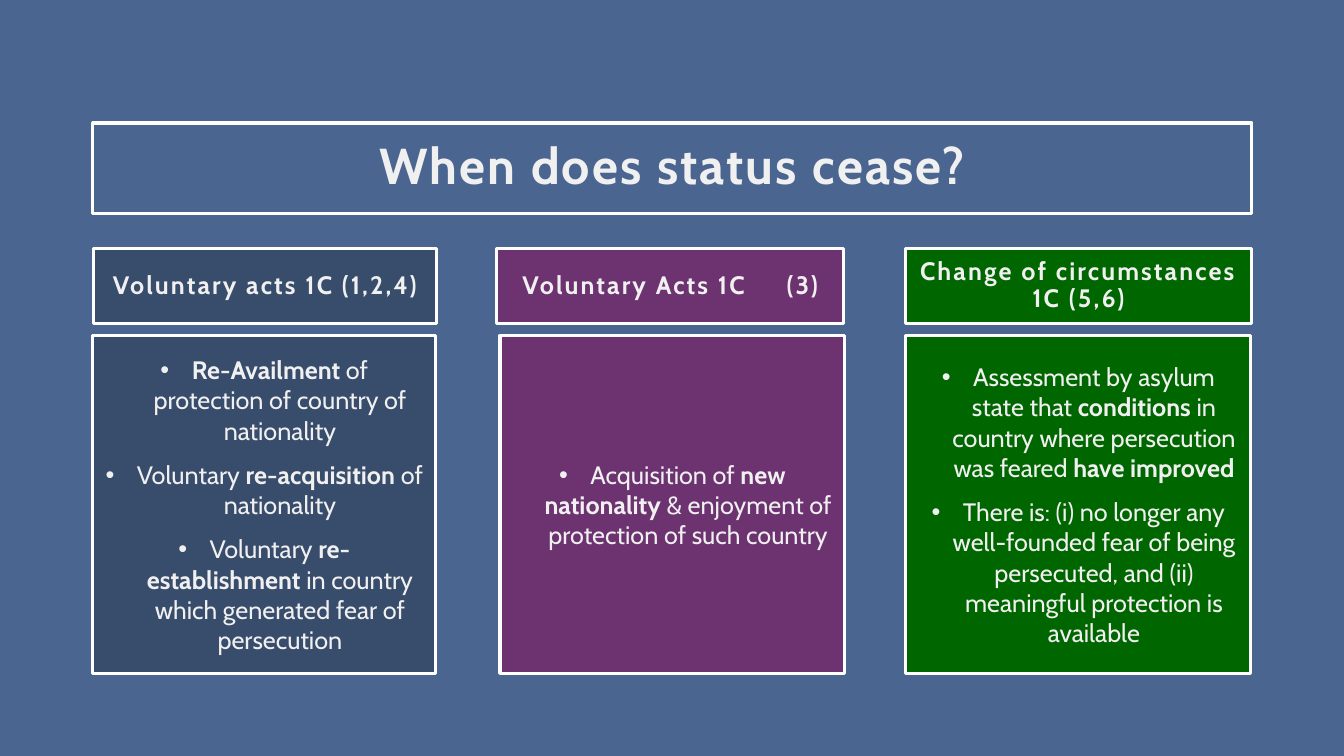
from pptx import Presentation
from pptx.dml.color import RGBColor
from pptx.enum import shapes, text
from pptx.oxml import parse_xml
from pptx.oxml.ns import nsdecls
from pptx.util import Cm, Pt

BACK = RGBColor(0x4A, 0x65, 0x90)
WHITE = RGBColor(0xFF, 0xFF, 0xFF)
INK = RGBColor(0xF1, 0xF0, 0xF0)
NAVY = RGBColor(0x38, 0x4C, 0x6C)
PLUM = RGBColor(0x6D, 0x33, 0x71)
GREEN = RGBColor(0x00, 0x66, 0x00)

FONT = "Cabin"
TRACK = 150
GAP = 2400
INDENT = Cm(0.79)

COLUMNS = [
    (NAVY, (2.36, 8.64), (2.34, 8.64), ["Voluntary acts 1C (1,2,4)"], [
        "*Re-Availment *of protection of country of nationality",
        "Voluntary *re-acquisition* of nationality",
        "Voluntary *re-establishment *in country which generated fear of persecution",
    ]),
    (PLUM, (12.52, 8.74), (12.6, 8.69), ["Voluntary Acts 1C", "(3)"], [
        "Acquisition of *new nationality *& enjoyment of protection of such country",
    ]),
    (GREEN, (22.81, 8.74), (22.83, 8.69), ["Change of circumstances 1C (5,6)"], [
        "Assessment by asylum state that *conditions *in country where "
        "persecution was feared *have improved*",
        "There is: (i) no longer any well-founded fear of being persecuted, "
        "and (ii) meaningful protection is available",
    ]),
]


def frame(shape, fill=None):
    if fill is None:
        shape.fill.background()
    else:
        shape.fill.solid()
        shape.fill.fore_color.rgb = fill
    shape.line.color.rgb = WHITE
    shape.line.width = Pt(2.25)
    body = shape.text_frame
    body.word_wrap = True
    body.auto_size = text.MSO_AUTO_SIZE.NONE
    body.vertical_anchor = text.MSO_ANCHOR.MIDDLE
    return body


def box(slide, span, top, height, fill):
    left, width = span
    shape = slide.shapes.add_shape(
        shapes.MSO_SHAPE.RECTANGLE, Cm(left), Cm(top), Cm(width), Cm(height))
    shape.shadow.inherit = False
    return frame(shape, fill)


def style(para, size, bold=None):
    para.alignment = text.PP_ALIGN.CENTER
    para.font.name = FONT
    para.font.size = Pt(size)
    para.font.color.rgb = INK
    para.font.bold = bold


def track(para, words, space=TRACK):
    run = para.add_run()
    run.text = words
    run._r.get_or_add_rPr().set("spc", str(space))


def heading(para, parts, size):
    style(para, size, True)
    para.line_spacing = 0.9
    for i, part in enumerate(parts):
        if i:
            track(para, " ", GAP)
        track(para, part)


def bullet(para, words):
    style(para, 18)
    para.space_before = Pt(10)
    for i, part in enumerate(words.split("*")):
        if part:
            run = para.add_run()
            run.text = part
            run.font.bold = i % 2 == 1
    props = para._p.get_or_add_pPr()
    props.set("marL", str(INDENT))
    props.set("indent", str(-INDENT))
    mark = [parse_xml(f'<a:buFont {nsdecls("a")} typeface="Arial"/>'),
            parse_xml(f'<a:buChar {nsdecls("a")} char="•"/>')]
    at = list(props).index(props.find(".//{*}spcBef")) + 1
    props[at:at] = mark


def title(slide, words):
    shape = slide.shapes.title
    shape.left, shape.top = Cm(2.34), Cm(3.1)
    shape.width, shape.height = Cm(29.21), Cm(2.29)
    heading(frame(shape).paragraphs[0], [words], 36)


def column(slide, fill, head, body, parts, items):
    para = box(slide, head, 6.27, 1.88, fill).paragraphs[0]
    heading(para, parts, 18)
    para.space_before = Pt(10)
    panel = box(slide, body, 8.46, 8.51, fill)
    for i, words in enumerate(items):
        bullet(panel.add_paragraph() if i else panel.paragraphs[0], words)


def main():
    deck = Presentation()
    deck.slide_width, deck.slide_height = Cm(33.87), Cm(19.05)
    slide = deck.slides.add_slide(deck.slide_layouts[5])
    slide.background.fill.solid()
    slide.background.fill.fore_color.rgb = BACK
    title(slide, "When does status cease?")
    for data in COLUMNS:
        column(slide, *data)
    deck.save("out.pptx")


if __name__ == "__main__":
    main()
